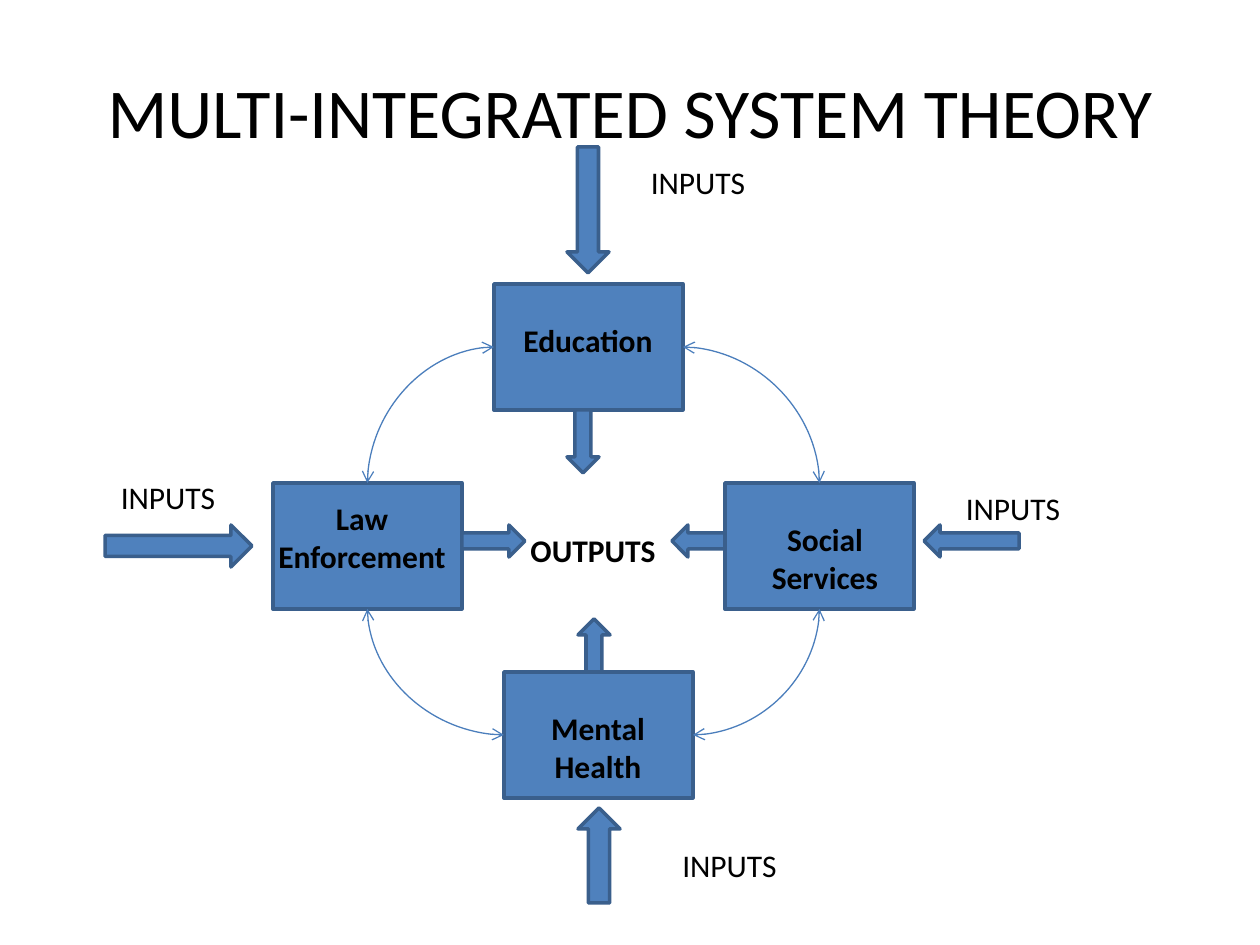
from pptx import Presentation
from pptx.dml.color import RGBColor
from pptx.enum.shapes import MSO_CONNECTOR, MSO_SHAPE
from pptx.enum.text import MSO_ANCHOR, PP_ALIGN
from pptx.oxml.ns import qn
from pptx.util import Emu, Pt
from lxml.etree import SubElement

SCALE = 914400 / 126
BLUE = RGBColor(0x4F, 0x81, 0xBD)
OUTLINE = RGBColor(0x3A, 0x5F, 0x8C)
CURVE = RGBColor(0x4B, 0x7E, 0xBC)
BLACK = RGBColor(0, 0, 0)


def px(*lengths):
    return [Emu(round(length * SCALE)) for length in lengths]


def add_text(text, left, top, width, height=50, size=18, bold=False, anchor=MSO_ANCHOR.TOP):
    frame = slide.shapes.add_textbox(*px(left, top, width, height)).text_frame
    frame.word_wrap = True
    frame.vertical_anchor = anchor
    paragraph = frame.paragraphs[0]
    paragraph.alignment = PP_ALIGN.CENTER
    run = paragraph.add_run()
    run.text = text
    run.font.name = "Calibri"
    run.font.size = Pt(size)
    run.font.bold = bold
    run.font.color.rgb = BLACK


presentation = Presentation()
presentation.slide_width, presentation.slide_height = px(1260, 945)
slide = presentation.slides.add_slide(presentation.slide_layouts[6])

add_text("MULTI-INTEGRATED SYSTEM THEORY", 63, 38, 1134, 145, size=40, anchor=MSO_ANCHOR.MIDDLE)

box_places = {
    "education": (494, 284),
    "social": (725, 483),
    "health": (504, 672),
    "law": (273, 483),
}
outlines = [(MSO_SHAPE.RECTANGLE, left, top, 189, 126) for left, top in box_places.values()]
outlines += [
    (MSO_SHAPE.LEFT_ARROW, 672, 525, 53, 32),
    (MSO_SHAPE.DOWN_ARROW, 567, 147, 42, 126),
    (MSO_SHAPE.UP_ARROW, 578, 808, 42, 95),
    (MSO_SHAPE.RIGHT_ARROW, 105, 525, 147, 42),
    (MSO_SHAPE.DOWN_ARROW, 567, 410, 32, 63),
    (MSO_SHAPE.RIGHT_ARROW, 462, 525, 63, 32),
    (MSO_SHAPE.UP_ARROW, 578, 619, 32, 53),
    (MSO_SHAPE.LEFT_ARROW, 924, 525, 95, 32),
]
shapes = []
for kind, *place in outlines:
    shape = slide.shapes.add_shape(kind, *px(*place))
    shape.shadow.inherit = False
    shape.fill.solid()
    shape.fill.fore_color.rgb = BLUE
    shape.line.color.rgb = OUTLINE
    shape.line.width = Pt(2)
    shapes.append(shape)
boxes = dict(zip(box_places, shapes))

TOP, LEFT, BOTTOM, RIGHT = range(4)
for start, start_side, end, end_side in [
    ("education", RIGHT, "social", TOP),
    ("health", RIGHT, "social", BOTTOM),
    ("health", LEFT, "law", BOTTOM),
    ("education", LEFT, "law", TOP),
]:
    connector = slide.shapes.add_connector(MSO_CONNECTOR.CURVE, 0, 0, 0, 0)
    connector.begin_connect(boxes[start], start_side)
    connector.end_connect(boxes[end], end_side)
    connector.line.color.rgb = CURVE
    connector.line.width = Pt(0.75)
    properties = connector._element.spPr
    properties.find(qn("a:prstGeom")).set("prst", "curvedConnector2")
    for tag in ("a:headEnd", "a:tailEnd"):
        SubElement(properties.find(qn("a:ln")), qn(tag), type="arrow")
    SubElement(properties, qn("a:effectLst"))

for text, left, top, width, height in [
    ("OUTPUTS", 514, 525, 158, 50),
    ("Education", 504, 315, 168, 50),
    ("Social Services", 746, 514, 158, 89),
    ("Mental Health", 514, 703, 168, 89),
    ("Law Enforcement", 262, 493, 200, 89),
]:
    add_text(text, left, top, width, height, bold=True)

for left, top, width in [(619, 157, 158), (945, 483, 136), (640, 840, 179), (105, 472, 126)]:
    add_text("INPUTS", left, top, width)

presentation.save("out.pptx")
